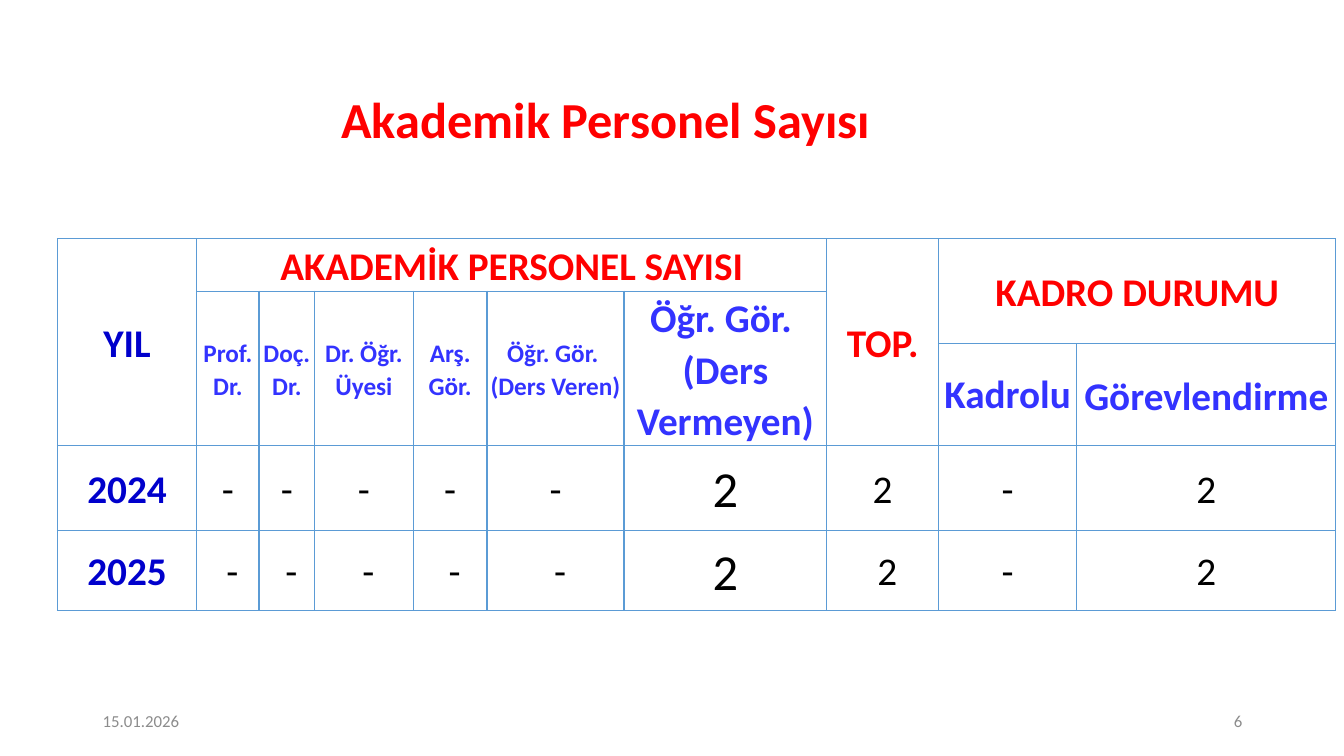
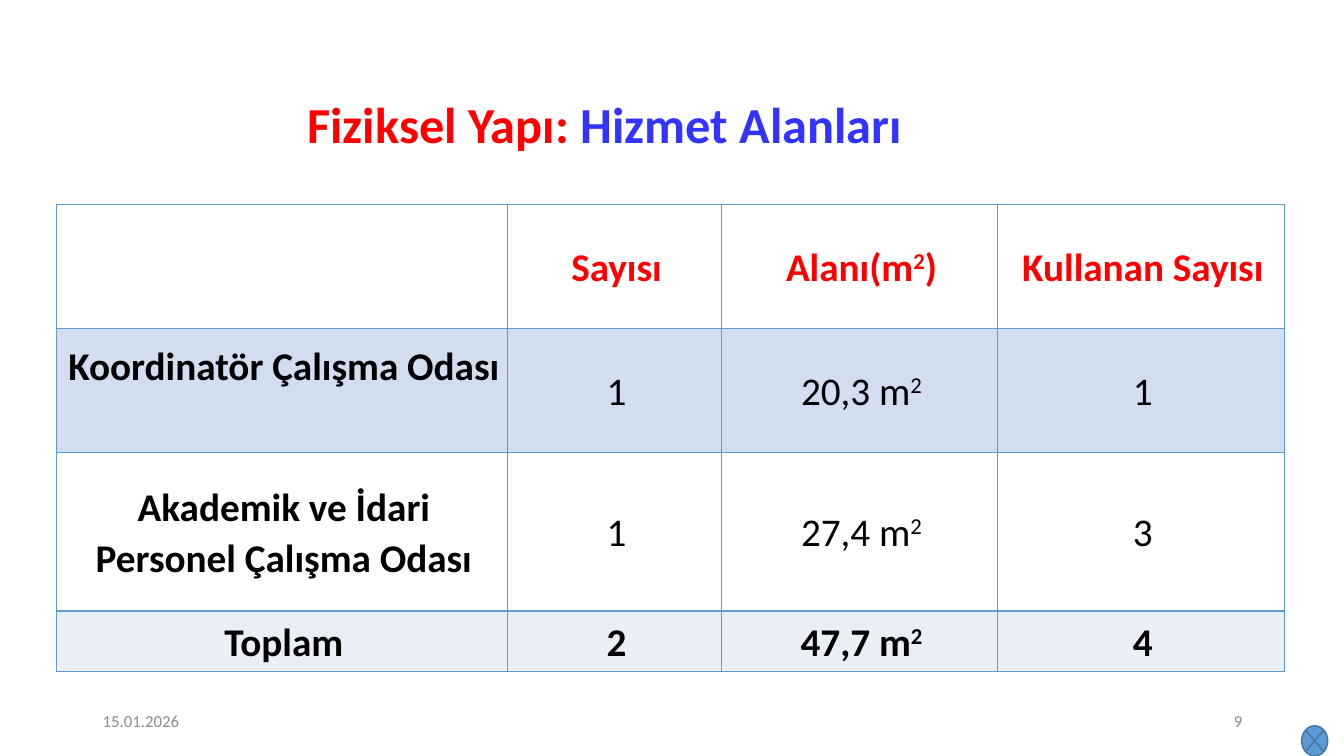
from lxml.etree import SubElement
from pptx import Presentation
from pptx.dml.color import RGBColor
from pptx.enum.shapes import MSO_SHAPE
from pptx.enum.text import MSO_ANCHOR, PP_ALIGN
from pptx.oxml.ns import qn
from pptx.util import Pt

PX = 9144  # 100 px to the inch

RED = RGBColor(0xFF, 0x00, 0x00)
BLUE = RGBColor(0x33, 0x33, 0xFF)
NAVY = RGBColor(0x00, 0x00, 0xCC)
BLACK = RGBColor(0x00, 0x00, 0x00)
GREY = RGBColor(0x8C, 0x8C, 0x8C)
WHITE = RGBColor(0xFF, 0xFF, 0xFF)
BAND = RGBColor(0xD2, 0xDE, 0xEF)
TOTAL = RGBColor(0xEA, 0xEF, 0xF7)
ACCENT = RGBColor(0x5B, 0x9B, 0xD5)
ACCENT_DARK = RGBColor(0x43, 0x73, 0x9E)

DATE = "15.01.2026"


def emu(*lengths):
    return [n * PX for n in lengths]


def split_superscripts(line):
    """Turn "m^2^" into runs; text between carets is raised."""
    return [(part, {"raised": i % 2 == 1})
            for i, part in enumerate(line.split("^")) if part]


def set_borders(cell, widths):
    tcPr = cell._tc.get_or_add_tcPr()
    for side, width in zip("LRTB", widths):
        ln = SubElement(tcPr, qn(f"a:ln{side}"), w=str(Pt(width)))
        fill = SubElement(ln, qn("a:solidFill"))
        SubElement(fill, qn("a:srgbClr"), val=str(ACCENT))


class Deck:
    FONT = {"name": "Calibri", "size": Pt(28), "bold": False}
    TITLE = {"size": Pt(36), "bold": True}
    SMALL = {"size": Pt(12)}

    def __init__(self):
        self.prs = Presentation()
        self.prs.slide_width, self.prs.slide_height = emu(1333, 750)
        self.s = None

    def slide(self, number):
        self.s = self.prs.slides.add_slide(self.prs.slide_layouts[6])
        for left, text, align in ((92, DATE, PP_ALIGN.LEFT),
                                  (942, number, PP_ALIGN.RIGHT)):
            self.text((left, 695, 300, 40), [[(text, {"color": GREY})]],
                      self.SMALL, {"alignment": align})

    def fill_text(self, tf, paragraphs, font, para, indent=0):
        """Fill tf with paragraphs, each a list of (text, format) runs."""
        for i, runs in enumerate(paragraphs):
            p = tf.add_paragraph() if i else tf.paragraphs[0]
            for key, value in para.items():
                setattr(p, key, value)
            if indent:
                p._p.get_or_add_pPr().set("marL", str(indent * PX))
            for text, extra in runs:
                r = p.add_run()
                r.text = text
                values = {**self.FONT, **font, **extra}
                r.font.color.rgb = values.pop("color", BLACK)
                if values.pop("raised", False):
                    r._r.get_or_add_rPr().set("baseline", "30000")
                for key, value in values.items():
                    setattr(r.font, key, value)

    def text(self, at, paragraphs, font, para):
        tf = self.s.shapes.add_textbox(*emu(*at)).text_frame
        tf.word_wrap = True
        tf.vertical_anchor = MSO_ANCHOR.MIDDLE
        self.fill_text(tf, paragraphs, font, para)

    def title(self, at, *runs):
        self.text(at, [[(text, {"color": color}) for text, color in runs]],
                  self.TITLE,
                  {"alignment": PP_ALIGN.CENTER, "line_spacing": 0.9})

    def junction(self, at):
        sp = self.s.shapes.add_shape(MSO_SHAPE.FLOWCHART_SUMMING_JUNCTION,
                                     *emu(*at))
        sp.shadow.inherit = False
        sp.fill.solid()
        sp.fill.fore_color.rgb = ACCENT
        sp.line.color.rgb = ACCENT_DARK
        sp.line.width = Pt(1)

    def table(self, corner, cols, rows, cells, insets, para=None, indent=0,
              fills=None, merges=(), total_row=None):
        """Cells maps (row, column) to (text, font, options)."""
        frame = self.s.shapes.add_table(
            len(rows), len(cols), *emu(*corner, sum(cols), sum(rows)))
        table = frame.table
        table.first_row = table.horz_banding = False
        for lines, attr, sizes in ((table.columns, "width", cols),
                                   (table.rows, "height", rows)):
            for line, size in zip(lines, sizes):
                setattr(line, attr, size * PX)
        base = {"alignment": PP_ALIGN.CENTER, "line_spacing": 1.07,
                **(para or {})}
        for row in range(len(rows)):
            for col in range(len(cols)):
                cell = table.cell(row, col)
                text, font, options = cells.get((row, col), ("", {}, {}))
                set_borders(cell, (1, 1, 2 if row == total_row else 1,
                                   2 if row + 1 == total_row else 1))
                if fills:
                    cell.fill.solid()
                    cell.fill.fore_color.rgb = fills[row]
                else:
                    cell.fill.background()
                cell.vertical_anchor = MSO_ANCHOR.MIDDLE
                for side, inset in zip(("left", "top", "right", "bottom"),
                                       options.get("insets", insets)):
                    setattr(cell, f"margin_{side}", inset * PX)
                if text:
                    self.fill_text(
                        cell.text_frame,
                        [split_superscripts(t) for t in text.split("\n")],
                        font, {**base, **options.get("para", {})},
                        options.get("indent", indent))
        for top, left, bottom, right in merges:
            table.cell(top, left).merge(table.cell(bottom, right))


def staff_slide(deck):
    deck.slide("6")
    deck.title((37, 83, 1128, 76), ("Akademik Personel Sayısı", RED))

    def bold(color, size=28):
        return {"bold": True, "color": color, "size": Pt(size)}

    cells = {
        (0, 0): ("YIL", bold(NAVY), {}),
        (0, 1): ("AKADEMİK PERSONEL SAYISI", bold(RED), {}),
        (0, 7): ("TOP.", bold(RED), {}),
        (0, 8): ("KADRO DURUMU", bold(RED), {}),
        (1, 6): ("Öğr. Gör. \n(Ders Vermeyen)", bold(BLUE), {}),
        (2, 8): ("Kadrolu", bold(BLUE), {"para": {"line_spacing": 1.0}}),
        (2, 9): ("Görevlendirme", bold(BLUE), {}),
    }
    ranks = ("Prof. Dr.", "Doç. Dr.", "Dr. Öğr. Üyesi", "Arş. Gör.",
             "Öğr. Gör. \n(Ders Veren)")
    for col, rank in enumerate(ranks, 1):
        cells[1, col] = (rank, bold(BLUE, 18), {})
    counts = ("-",) * 5 + ("2", "2", "-", "2")
    for row, year, shift in ((3, "2024", 0), (4, "2025", 9)):
        cells[row, 0] = (year, bold(NAVY), {})
        for col, count in enumerate(counts, 1):
            shifted = col <= 5 or col == 7
            cells[row, col] = (count, {"size": Pt(36 if col == 6 else 28)},
                               {"indent": shift if shifted else 0})
    deck.table((57, 237), (138, 62, 55, 98, 73, 136, 201, 111, 137, 257),
               (52, 52, 101, 84, 80), cells, (1, 1, 1, 0),
               merges=[(0, 0, 2, 0), (0, 1, 0, 6), (0, 7, 2, 7), (0, 8, 1, 9)]
               + [(1, col, 2, col) for col in range(1, 7)])


def areas_slide(deck):
    deck.slide("9")
    deck.title((38, 93, 1124, 67), ("Fiziksel Yapı: ", RED),
               ("Hizmet Alanları", BLUE))
    deck.junction((1291, 720, 26, 30))
    grid = (
        ("", "Sayısı", "Alanı(m^2^)", "Kullanan Sayısı"),
        ("Koordinatör Çalışma Odası", "1", "20,3 m^2^", "1"),
        ("Akademik ve İdari Personel Çalışma Odası", "1", "27,4 m^2^", "3"),
        ("Toplam", "2", "47,7 m^2^", "4"),
    )
    cells = {}
    for row, texts in enumerate(grid):
        for col, text in enumerate(texts):
            font = {"bold": row in (0, 3) or col == 0,
                    "color": RED if row == 0 else BLACK}
            raised = {"insets": (5, 0, 5, 50)} if (row, col) == (1, 0) else {}
            cells[row, col] = (text, font, raised)
    deck.table((56, 203), (447, 213, 273, 285), (123, 123, 157, 60), cells,
               (7, 0, 7, 0), {"space_after": Pt(8)}, indent=4,
               fills=(WHITE, BAND, WHITE, TOTAL), total_row=3)


def main():
    deck = Deck()
    staff_slide(deck)
    areas_slide(deck)
    deck.prs.save("out.pptx")


if __name__ == "__main__":
    main()
